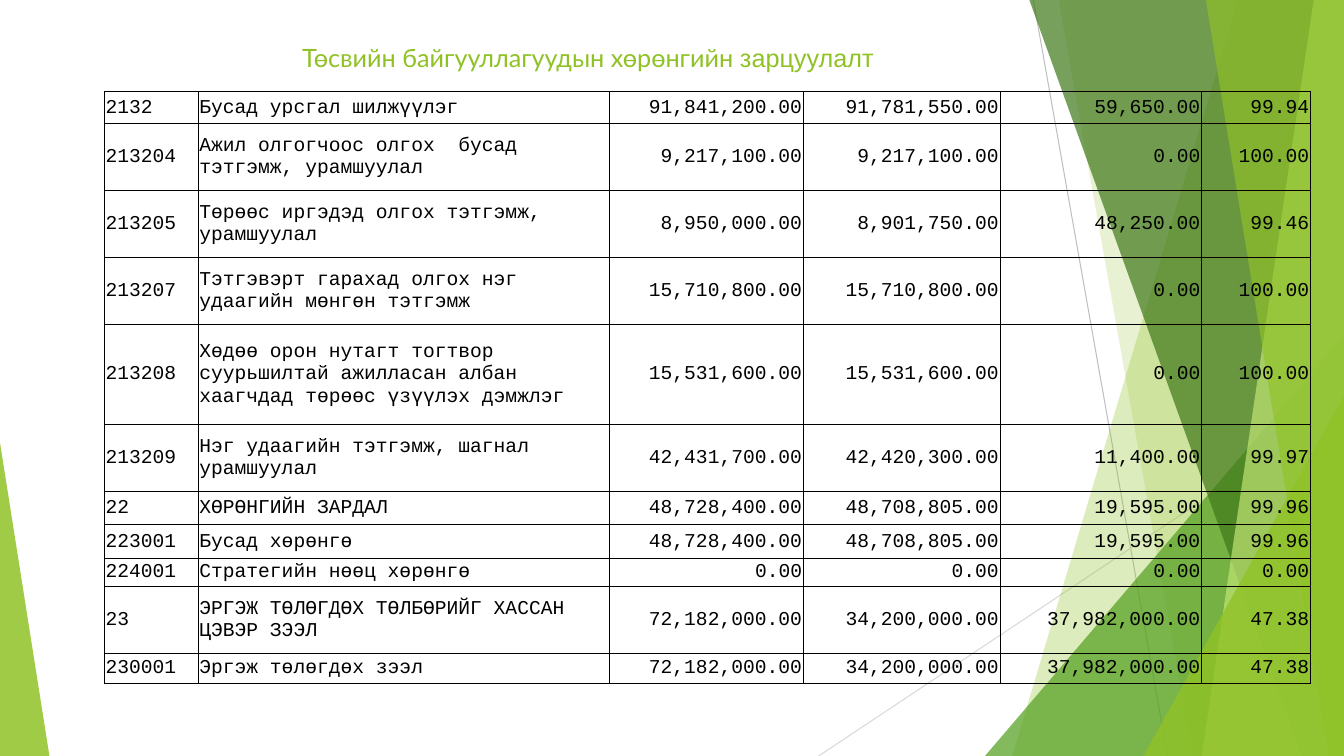
from dataclasses import dataclass

from lxml.etree import SubElement as Sub
from pptx import Presentation
from pptx.dml.color import RGBColor as Rgb
from pptx.enum.shapes import MSO_CONNECTOR as Link, MSO_SHAPE as Preset
from pptx.enum.text import MSO_ANCHOR as Anchor, MSO_AUTO_SIZE as Fit, PP_ALIGN as Align
from pptx.oxml.ns import qn
from pptx.util import Emu, Inches, Pt

INK = {"black": "000000", "lime": "90C226", "leaf": "54A021", "pine": "3F7819",
       "mint": "C0E474", "gray": "BFBFBF", "pale": "D9D9D9"}
WIDE, HIGH = Inches(13.33), Inches(7.5)


# Every length is a percentage of the slide's width or height
def across(share: float) -> Emu:
    return Emu(round(WIDE * share / 100))


def down(share: float) -> Emu:
    return Emu(round(HIGH * share / 100))


@dataclass
class Ray:
    start: tuple[float, float]
    end: tuple[float, float]
    ink: str


@dataclass
class Band:
    """Full-height facet with a slanted left edge, reaching the right side."""
    top: float
    foot: float
    ink: str
    alpha: int


@dataclass
class Wedge:
    """Triangle standing on the bottom edge; peak is 0 (left) or 1 (right)."""
    left: float
    top: float
    width: float
    peak: int
    ink: str
    alpha: int


@dataclass
class Item:
    code: str
    name: str
    plan: str
    spent: str
    rest: str
    rate: str
    height: float

    def texts(self) -> list[str]:
        return [self.code, self.name, self.plan, self.spent, self.rest, self.rate]


RAYS = [Ray((76.89, 0), (86.87, 100), "gray"), Ray((100, 53.73), (60.92, 100), "pale")]
FACETS = [
    Band(92.12, 75.32, "lime", 30),
    Band(78.77, 88.75, "lime", 20),
    Wedge(73.29, 44.4, 26.71, 1, "leaf", 72),
    Band(76.59, 96.85, "pine", 70),
    Band(97.75, 89.42, "mint", 70),
    Band(89.72, 98.87, "lime", 65),
    Wedge(85.07, 52.4, 14.93, 1, "lime", 80),
    Wedge(0, 58.53, 3.68, 0, "lime", 85),
]
TITLE = [("Төсвийн байгууллагуудын хөрөнгийн ", "Lato"), ("зарцуулалт", "Arial")]

# Table columns, and row heights by the number of text lines
COLS = [6.98, 30.61, 14.4, 14.63, 15, 8.1]
ONE, TWO, THREE = 4.43, 8.86, 13.23
ITEMS = [
    Item("2132", "Бусад урсгал шилжүүлэг",
         "91,841,200.00", "91,781,550.00", "59,650.00", "99.94", 4.23),
    Item("213204", "Ажил олгогчоос олгох  бусад тэтгэмж, урамшуулал",
         "9,217,100.00", "9,217,100.00", "0.00", "100.00", TWO),
    Item("213205", "Төрөөс иргэдэд олгох тэтгэмж, урамшуулал",
         "8,950,000.00", "8,901,750.00", "48,250.00", "99.46", TWO),
    Item("213207", "Тэтгэвэрт гарахад олгох нэг удаагийн мөнгөн тэтгэмж",
         "15,710,800.00", "15,710,800.00", "0.00", "100.00", TWO),
    Item("213208", "Хөдөө орон нутагт тогтвор суурьшилтай ажилласан албан "
         "хаагчдад төрөөс үзүүлэх дэмжлэг",
         "15,531,600.00", "15,531,600.00", "0.00", "100.00", THREE),
    Item("213209", "Нэг удаагийн тэтгэмж, шагнал урамшуулал",
         "42,431,700.00", "42,420,300.00", "11,400.00", "99.97", TWO),
    Item("22", "ХӨРӨНГИЙН ЗАРДАЛ",
         "48,728,400.00", "48,708,805.00", "19,595.00", "99.96", ONE),
    Item("223001", "Бусад хөрөнгө",
         "48,728,400.00", "48,708,805.00", "19,595.00", "99.96", ONE),
    Item("224001", "Стратегийн нөөц хөрөнгө", "0.00", "0.00", "0.00", "0.00", 3.7),
    Item("23", "ЭPГЭЖ ТӨЛӨГДӨХ ТӨЛБӨРИЙГ ХАССАН ЦЭВЭР ЗЭЭЛ",
         "72,182,000.00", "34,200,000.00", "37,982,000.00", "47.38", TWO),
    Item("230001", "Эргэж төлөгдөх зээл",
         "72,182,000.00", "34,200,000.00", "37,982,000.00", "47.38", 3.97),
]


def tint(ink: str) -> Rgb:
    return Rgb.from_string(INK[ink])


def add_run(para, text: str, face: str, size: float, ink: str) -> None:
    run = para.add_run()
    run.text = text
    run.font.name, run.font.size = face, Pt(size)
    run.font.color.rgb = tint(ink)


# Background
def draw_ray(shapes, ray: Ray) -> None:
    (left, top), (right, foot) = ray.start, ray.end
    line = shapes.add_connector(Link.STRAIGHT, across(left), down(top),
                                across(right), down(foot))
    line.line.color.rgb, line.line.width = tint(ray.ink), Pt(0.75)
    Sub(line._element.spPr, qn("a:effectLst"))


def draw_facet(shapes, facet: Band | Wedge) -> None:
    if isinstance(facet, Band):
        pen = shapes.build_freeform(across(facet.top), 0)
        pen.add_line_segments([(WIDE, 0), (WIDE, HIGH), (across(facet.foot), HIGH)])
        shape = pen.convert_to_shape()
    else:
        shape = shapes.add_shape(Preset.ISOSCELES_TRIANGLE, across(facet.left),
                                 down(facet.top), across(facet.width),
                                 down(100 - facet.top))
        shape.adjustments[0] = facet.peak
    shape.shadow.inherit = False
    shape.line.fill.background()
    shape.fill.solid()
    shape.fill.fore_color.rgb = tint(facet.ink)
    tone = shape._element.spPr.find(f"{qn('a:solidFill')}/{qn('a:srgbClr')}")
    Sub(tone, qn("a:alpha"), val=str(facet.alpha * 1000))


# Title
def set_title(shapes) -> None:
    title = shapes.title
    title.left, title.top = across(8.48), down(4.93)
    title.width, title.height = across(70.52), down(7.07)
    frame = title.text_frame
    frame.word_wrap, frame.auto_size = True, Fit.NONE
    frame.vertical_anchor = Anchor.TOP
    para = frame.paragraphs[0]
    para.alignment = Align.CENTER
    for text, face in TITLE:
        add_run(para, text, face, 18, "lime")
    shapes._spTree.append(title._element)  # above the facets


# Table
def set_cell(cell, text: str, align: Align) -> None:
    cell.margin_left = cell.margin_right = cell.margin_top = Inches(0.01)
    cell.margin_bottom = 0
    cell.vertical_anchor = Anchor.MIDDLE
    props = cell._tc.get_or_add_tcPr()
    for side in "LRTB":
        edge = Sub(props, qn(f"a:ln{side}"), w=str(Pt(0.5)))
        Sub(Sub(edge, qn("a:solidFill")), qn("a:srgbClr"), val=INK["black"])
    cell.fill.background()
    para = cell.text_frame.paragraphs[0]
    para.alignment = align
    add_run(para, text, "Courier New", 14, "black")


def draw_table(shapes) -> None:
    table = shapes.add_table(len(ITEMS), len(COLS), across(7.78), down(12.1),
                             across(sum(COLS)),
                             down(sum(item.height for item in ITEMS))).table
    table.first_row = table.horz_banding = False
    for col, width in zip(table.columns, COLS):
        col.width = across(width)
    for r, item in enumerate(ITEMS):
        table.rows[r].height = down(item.height)
        for c, text in enumerate(item.texts()):
            set_cell(table.cell(r, c), text, Align.LEFT if c < 2 else Align.RIGHT)


def main() -> None:
    deck = Presentation()
    deck.slide_width, deck.slide_height = WIDE, HIGH
    shapes = deck.slides.add_slide(deck.slide_layouts[5]).shapes
    for ray in RAYS:
        draw_ray(shapes, ray)
    for facet in FACETS:
        draw_facet(shapes, facet)
    set_title(shapes)
    draw_table(shapes)
    deck.save("out.pptx")


if __name__ == "__main__":
    main()
